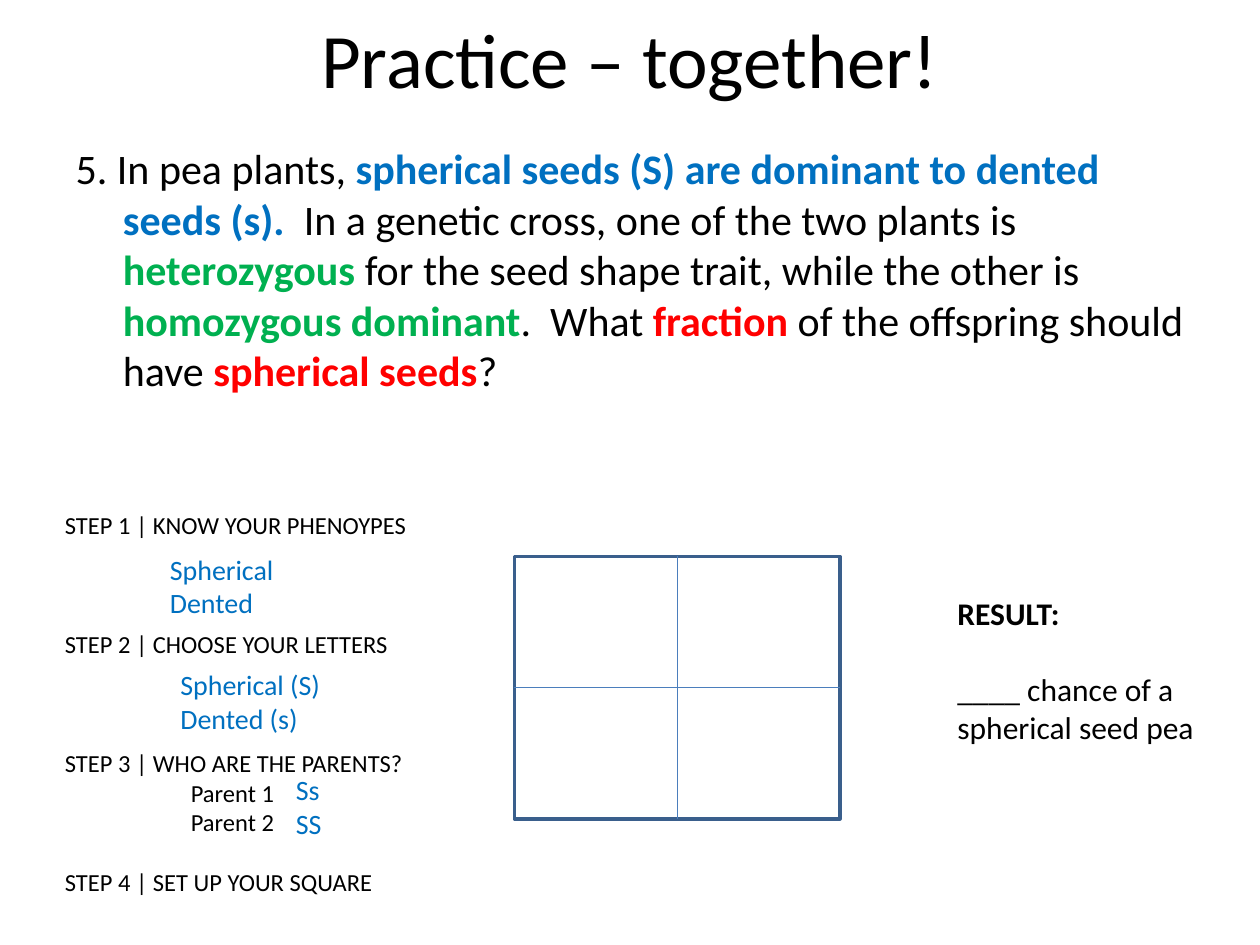
"""Build the pea plant genetics practice slide."""
import pptx
import pptx.dml.color
import pptx.enum.shapes
import pptx.enum.text
import pptx.oxml
import pptx.oxml.ns
import pptx.util

Pt = pptx.util.Pt
BLACK, WHITE, BLUE, GREEN, RED = "000000", "FFFFFF", "0070C0", "00B050", "FF0000"
OUTLINE, DIVIDER = "3A5F8C", "4B7EBC"

QUESTION = [
    ("5. In pea plants, ", BLACK),
    ("spherical seeds (S) are dominant to dented seeds (s). ", BLUE),
    (" In a genetic cross, one of the two plants is ", BLACK),
    ("heterozygous", GREEN),
    (" for the seed shape trait, while the other is ", BLACK),
    ("homozygous dominant", GREEN),
    (".  What ", BLACK),
    ("fraction", RED),
    (" of the offspring should have ", BLACK),
    ("spherical seeds", RED),
    ("?", BLACK),
]
STEPS = [
    ("STEP 1 | KNOW YOUR PHENOYPES", 0, 0),
    ("STEP 2 | CHOOSE YOUR LETTERS", 51.25, 0),
    ("STEP 3 | WHO ARE THE PARENTS?", 51.25, 0),
    ("Parent 1", 0, 72),
    ("Parent 2", 0, 72),
    ("STEP 4 | SET UP YOUR SQUARE", 17.1, 0),
]
ANSWERS = [
    (90, 312, ["Spherical", "Dented"]),
    (96, 378, ["Spherical (S)", "Dented (s)"]),
    (162, 438, ["Ss", "SS"]),
]


def rgb(value):
    """Return the colour for a hex string."""
    return pptx.dml.color.RGBColor.from_string(value)


def place(shape, left, top, width, height):
    """Move and size a shape in points."""
    shape.left, shape.top = Pt(left), Pt(top)
    shape.width, shape.height = Pt(width), Pt(height)


def add_run(paragraph, text, size, color=BLACK, bold=False):
    """Append one formatted run."""
    run = paragraph.add_run()
    run.text = text
    run.font.name = "Calibri"
    run.font.size = Pt(size)
    run.font.bold = bold
    run.font.color.rgb = rgb(color)


def add_text(slide, box, lines, size, color=BLACK):
    """Add a text box from lines of text, space before, indent and weight."""
    shape = slide.shapes.add_textbox(*map(Pt, box))
    frame = shape.text_frame
    frame.word_wrap = True
    frame.auto_size = pptx.enum.text.MSO_AUTO_SIZE.SHAPE_TO_FIT_TEXT
    for index, (text, before, indent, bold) in enumerate(lines):
        paragraph = frame.add_paragraph() if index else frame.paragraphs[0]
        paragraph.space_before = Pt(before)
        paragraph._p.get_or_add_pPr().set("marL", str(Pt(indent)))
        add_run(paragraph, text, size, color, bold)


def fill_title(slide):
    """Place and write the title."""
    title = slide.shapes.title
    place(title, 36, -12, 648, 90)
    paragraph = title.text_frame.paragraphs[0]
    paragraph.alignment = pptx.enum.text.PP_ALIGN.CENTER
    add_run(paragraph, "Practice – together!", 44)


def fill_question(slide):
    """Write the question with a hanging indent and no bullet."""
    body = slide.placeholders[1]
    place(body, 36, 78, 648, 356)
    paragraph = body.text_frame.paragraphs[0]
    properties = paragraph._p.get_or_add_pPr()
    properties.set("marL", str(Pt(27)))
    properties.set("indent", str(Pt(-27)))
    properties.append(pptx.oxml.parse_xml(
        f"<a:buNone {pptx.oxml.ns.nsdecls('a')}/>"))
    for text, color in QUESTION:
        add_run(paragraph, text, 24, color, color != BLACK)


def add_divider(group, left, top, right, bottom):
    """Add a thin dividing line without a shadow."""
    line = group.shapes.add_connector(
        pptx.enum.shapes.MSO_CONNECTOR.STRAIGHT, *map(Pt, (left, top, right, bottom)))
    line.line.color.rgb = rgb(DIVIDER)
    line.line.width = Pt(0.75)
    line._element.spPr.append(pptx.oxml.parse_xml(
        f"<a:effectLst {pptx.oxml.ns.nsdecls('a')}/>"))


def add_punnett_square(slide, left, top, width, height):
    """Add the empty two by two square as a group."""
    group = slide.shapes.add_group_shape()
    frame = group.shapes.add_shape(
        pptx.enum.shapes.MSO_SHAPE.RECTANGLE, *map(Pt, (left, top, width, height)))
    frame.shadow.inherit = False
    frame.fill.solid()
    frame.fill.fore_color.rgb = rgb(WHITE)
    frame.line.color.rgb = rgb(OUTLINE)
    frame.line.width = Pt(2)
    middle, center = left + width / 2, top + height / 2
    add_divider(group, middle, top, middle, top + height)
    add_divider(group, left, center, left + width, center)


def main():
    """Build and save the slide."""
    presentation = pptx.Presentation()
    presentation.slide_width, presentation.slide_height = Pt(720), Pt(540)
    slide = presentation.slides.add_slide(presentation.slide_layouts[1])
    fill_title(slide)
    fill_question(slide)
    add_text(slide, (30, 288, 330, 227.5), [(*step, False) for step in STEPS], 14)
    for left, top, words in ANSWERS:
        lines = [(word, 0, 0, False) for word in words]
        add_text(slide, (left, top, 168, 46), lines, 16, BLUE)
    add_punnett_square(slide, 294, 318, 186, 150)
    result = [("RESULT:", 0, 0, True),
              ("____ chance of a spherical seed pea", 22, 0, False)]
    add_text(slide, (540, 336, 168, 94.5), result, 18)
    presentation.save("out.pptx")


if __name__ == "__main__":
    main()
